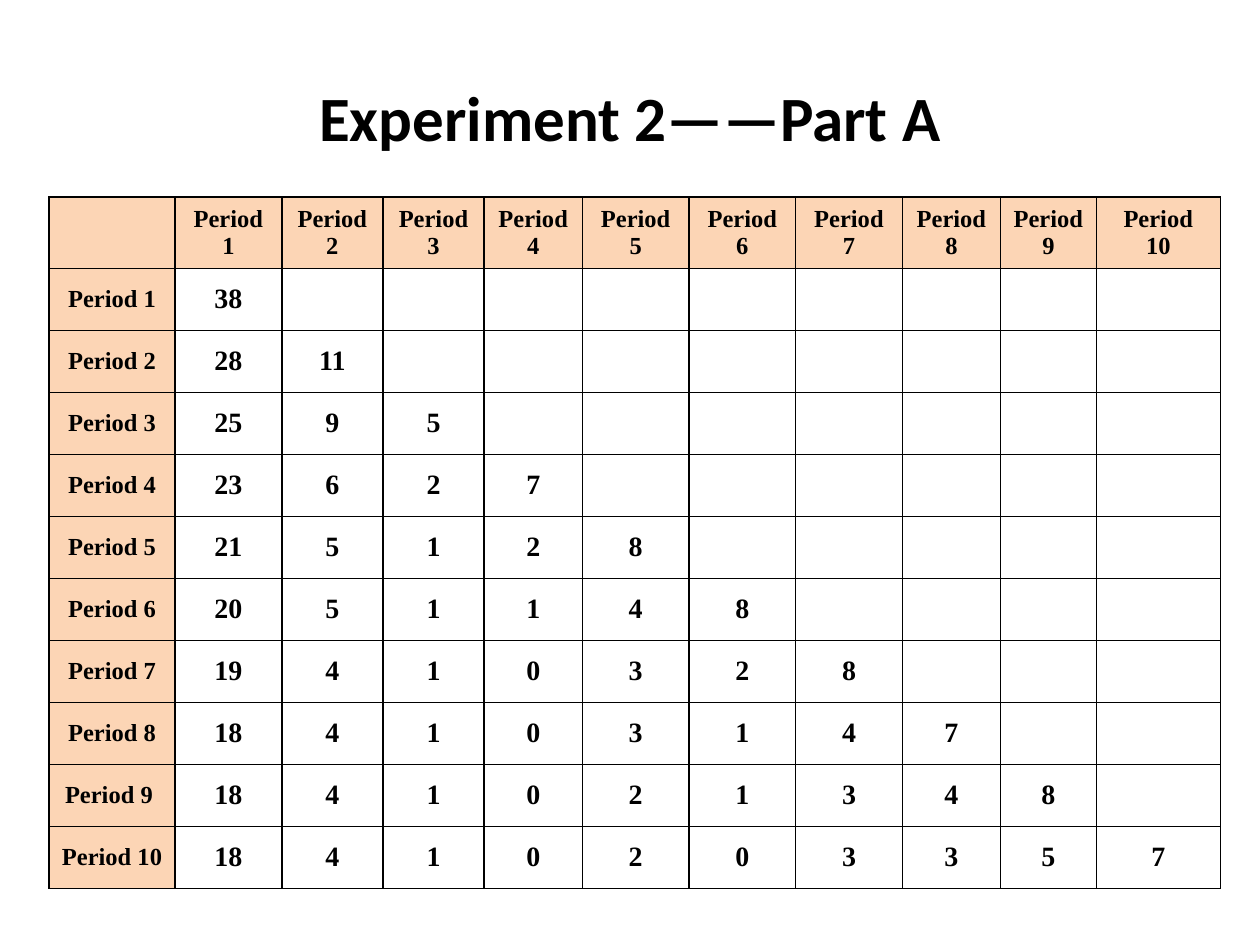
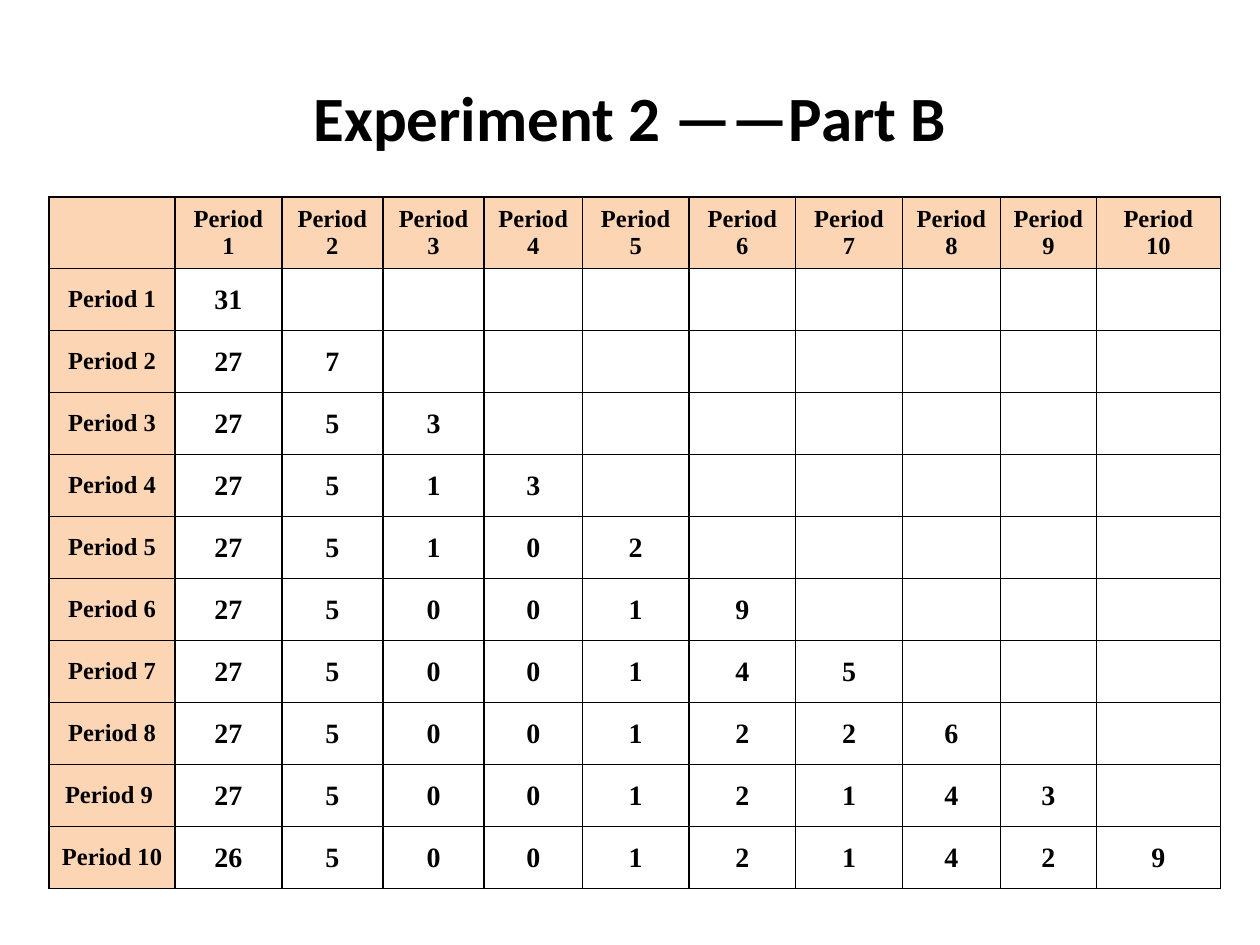
from lxml import etree
from pptx import Presentation
from pptx.dml.color import RGBColor
from pptx.enum import text
from pptx.oxml.ns import qn
from pptx.util import Cm, Pt

BLACK = RGBColor(0, 0, 0)
PEACH = RGBColor(0xFC, 0xD5, 0xB5)

HEADS = [f"Period {n}" for n in range(1, 11)]
SIDES = ["Period 9 " if head == "Period 9" else head for head in HEADS]
WIDTHS = [2.54, 2.15, 2.04, 2.04, 1.98, 2.15, 2.15, 2.15, 1.98, 1.93, 2.5]
ROW = 1.25

PARTS = [
    ("Experiment 2——Part A", 0, [
        [38],
        [28, 11],
        [25, 9, 5],
        [23, 6, 2, 7],
        [21, 5, 1, 2, 8],
        [20, 5, 1, 1, 4, 8],
        [19, 4, 1, 0, 3, 2, 8],
        [18, 4, 1, 0, 3, 1, 4, 7],
        [18, 4, 1, 0, 2, 1, 3, 4, 8],
        [18, 4, 1, 0, 2, 0, 3, 3, 5, 7],
    ]),
    ("Experiment 2 ——Part B", 0.03, [
        [31],
        [27, 7],
        [27, 5, 3],
        [27, 5, 1, 3],
        [27, 5, 1, 0, 2],
        [27, 5, 0, 0, 1, 9],
        [27, 5, 0, 0, 1, 4, 5],
        [27, 5, 0, 0, 1, 2, 2, 6],
        [27, 5, 0, 0, 1, 2, 1, 4, 3],
        [26, 5, 0, 0, 1, 2, 1, 4, 2, 9],
    ]),
]


def write(frame, words, size, face):
    para = frame.paragraphs[0]
    para.text = words
    para.alignment = text.PP_ALIGN.CENTER
    font = para.font
    font.name, font.size, font.bold = face, Pt(size), True
    font.color.rgb = BLACK


def add_title(slide, words):
    box = slide.shapes.add_textbox(Cm(1.27), Cm(0.76), Cm(22.86), Cm(3.18))
    frame = box.text_frame
    frame.word_wrap = True
    frame.vertical_anchor = text.MSO_ANCHOR.MIDDLE
    write(frame, words, 36, "Calibri")


def add_edges(cell):
    props = cell._tc.get_or_add_tcPr()
    for side in ("lnL", "lnR", "lnT", "lnB"):
        line = etree.SubElement(props, qn(f"a:{side}"), w=str(Pt(1)))
        fill = etree.SubElement(line, qn("a:solidFill"))
        etree.SubElement(fill, qn("a:srgbClr"), val=str(BLACK))


def add_grid(slide, counts, inset):
    rows = [["", *HEADS]]
    rows += [[side, *nums] for side, nums in zip(SIDES, counts)]
    table = slide.shapes.add_table(
        len(rows), len(WIDTHS), Cm(0.99), Cm(3.97),
        Cm(sum(WIDTHS)), Cm(ROW * len(rows))).table
    table.first_row = table.horz_banding = False
    for col, width in zip(table.columns, WIDTHS):
        col.width = Cm(width)
    for r, row in enumerate(rows):
        table.rows[r].height = Cm(ROW)
        for c in range(len(WIDTHS)):
            cell = table.cell(r, c)
            add_edges(cell)
            label = r == 0 or c == 0
            if label:
                cell.fill.solid()
                cell.fill.fore_color.rgb = PEACH
            else:
                cell.fill.background()
            if c >= len(row) or row[c] == "":
                continue
            cell.vertical_anchor = text.MSO_ANCHOR.MIDDLE
            if not label:
                cell.margin_left = cell.margin_right = Cm(inset)
                cell.margin_top, cell.margin_bottom = Cm(inset), 0
            write(cell.text_frame, str(row[c]), 14 if label else 16,
                  "Times New Roman")


def main():
    deck = Presentation()
    deck.slide_width, deck.slide_height = Cm(25.4), Cm(19.05)
    for title, inset, counts in PARTS:
        slide = deck.slides.add_slide(deck.slide_layouts[6])
        add_title(slide, title)
        add_grid(slide, counts, inset)
    deck.save("out.pptx")


if __name__ == "__main__":
    main()
